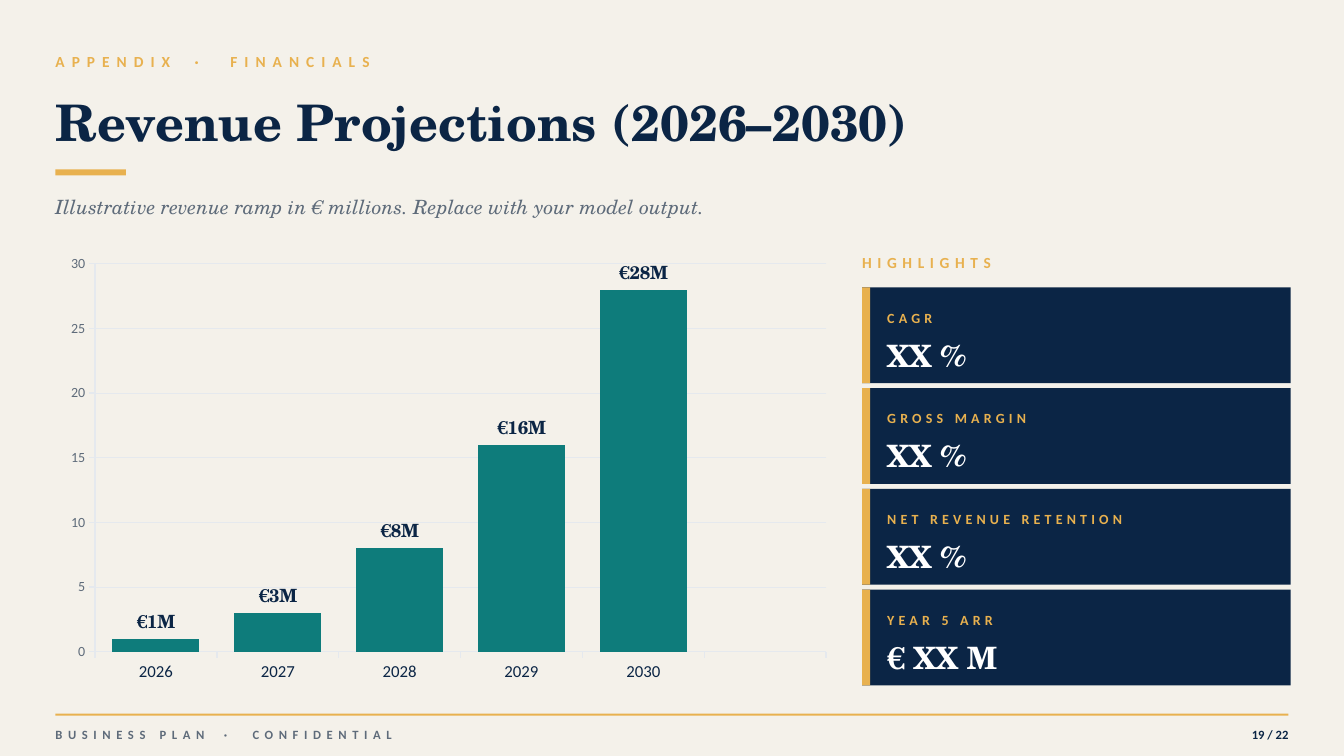
from pptx import Presentation, util as u
from pptx.chart.data import CategoryChartData
from pptx.dml.color import RGBColor
from pptx.enum import chart as ch, shapes, text

SERIF, SANS = "TeX Gyre Schola", "Calibri"
NAVY, GOLD, TEAL, SLATE = "0B2545", "E8B14F", "0E7C7B", "5E6B7A"
CREAM, PALE, WHITE = "F4F1EA", "E5E9EE", "FFFFFF"
SEPARATOR = " · "


def px(length):
    return u.Emu(length * 9144)


def color(code):
    return RGBColor.from_string(code)


def style_font(font, size, code, face, bold=False, italic=False):
    font.size, font.name = u.Pt(size), face
    font.bold, font.italic = bold, italic
    font.color.rgb = color(code)


def write(frame, content, size=11, code=GOLD, face=SANS, bold=True,
          italic=False, tracking=0, align=text.PP_ALIGN.LEFT):
    frame.margin_left = frame.margin_right = 0
    frame.margin_top = frame.margin_bottom = 0
    frame.word_wrap = True
    frame.auto_size = text.MSO_AUTO_SIZE.NONE
    frame.vertical_anchor = text.MSO_ANCHOR.MIDDLE
    line = frame.paragraphs[0]
    line.alignment = align
    for part in filter(None, content.partition(SEPARATOR)):
        run = line.add_run()
        run.text = part
        style_font(run.font, size, code, face, bold, italic)
        if tracking:
            spread = 2 if part == SEPARATOR else 1
            run.font._element.set("spc", str(tracking * spread * 100))


class Deck:
    def __init__(self):
        self.prs = Presentation()
        self.prs.slide_width, self.prs.slide_height = px(1333), px(750)
        self.slide = self.prs.slides.add_slide(self.prs.slide_layouts[5])
        fill = self.slide.background.fill
        fill.solid()
        fill.fore_color.rgb = color(CREAM)

    def title(self, content, x, y, w, h):
        heading = self.slide.shapes.title
        heading.left, heading.top = px(x), px(y)
        heading.width, heading.height = px(w), px(h)
        write(heading.text_frame, content, size=36, code=NAVY, face=SERIF)

    def label(self, content, x, y, w, h, **style):
        box = self.slide.shapes.add_textbox(px(x), px(y), px(w), px(h))
        write(box.text_frame, content, **style)

    def bar(self, x, y, w, h, code=GOLD):
        block = self.slide.shapes.add_shape(
            shapes.MSO_SHAPE.RECTANGLE, px(x), px(y), px(w), px(h))
        block.shadow.inherit = False
        block.fill.solid()
        block.fill.fore_color.rgb = color(code)
        block.line.fill.background()

    def card(self, y, metric, value):
        self.bar(855, y, 425, 95, NAVY)
        self.bar(855, y, 8, 95)
        self.label(metric, 880, y + 15, 400, 30, size=10, tracking=3)
        self.label(value, 880, y + 42, 400, 50, size=22, code=WHITE, face=SERIF)

    def columns(self, years, revenue, x, y, w, h):
        data = CategoryChartData()
        data.categories = years
        data.add_series("Series 1", revenue)
        chart = self.slide.shapes.add_chart(
            ch.XL_CHART_TYPE.COLUMN_CLUSTERED, px(x), px(y), px(w), px(h), data).chart
        chart.has_title = chart.has_legend = False
        style_font(chart.font, 10, "000000", SANS)

        for axis, size, code in ((chart.category_axis, 12, NAVY),
                                 (chart.value_axis, 10, SLATE)):
            style_font(axis.tick_labels.font, size, code, SANS)
            axis.major_tick_mark = ch.XL_TICK_MARK.OUTSIDE
            axis.format.line.color.rgb = color(PALE)
            axis.format.line.width = u.Pt(1)
        chart.category_axis.tick_label_position = ch.XL_TICK_LABEL_POSITION.LOW
        scale = chart.value_axis
        scale.minimum_scale, scale.maximum_scale, scale.major_unit = 0, 30, 5
        scale.has_major_gridlines = True
        grid = scale.major_gridlines.format.line
        grid.color.rgb, grid.width = color(PALE), u.Pt(0.5)

        plot = chart.plots[0]
        plot.gap_width, plot.vary_by_categories = 40, False
        ramp = plot.series[0]
        ramp.format.fill.solid()
        ramp.format.fill.fore_color.rgb = color(TEAL)
        amounts = ramp.data_labels
        amounts.show_value = True
        amounts.number_format, amounts.number_format_is_linked = '"€"0"M"', False
        amounts.position = ch.XL_LABEL_POSITION.OUTSIDE_END
        style_font(amounts.font, 13, NAVY, SERIF, bold=True)


def main():
    deck = Deck()
    deck.label("APPENDIX · FINANCIALS", 55, 45, 1000, 32, tracking=5)
    deck.title("Revenue Projections (2026–2030)", 55, 78, 1230, 85)
    deck.bar(55, 168, 70, 6)
    deck.label("Illustrative revenue ramp in € millions. Replace with your model output.",
               55, 185, 1230, 40, size=14, code=SLATE, face=SERIF, bold=False, italic=True)

    deck.columns(["2026", "2027", "2028", "2029", "2030", ""],
                 [1, 3, 8, 16, 28, None], 55, 245, 780, 440)

    deck.label("HIGHLIGHTS", 855, 245, 425, 30, tracking=4)
    highlights = [("CAGR", "XX %"), ("GROSS MARGIN", "XX %"),
                  ("NET REVENUE RETENTION", "XX %"), ("YEAR 5 ARR", "€ XX M")]
    for row, (metric, value) in enumerate(highlights):
        deck.card(285 + 100 * row, metric, value)

    deck.bar(55, 708, 1223, 2)
    deck.label("BUSINESS PLAN · CONFIDENTIAL", 55, 715, 600, 28,
               size=9, code=SLATE, tracking=4)
    deck.label("19 / 22", 1178, 715, 100, 28, size=9, code=NAVY,
               align=text.PP_ALIGN.RIGHT)
    deck.prs.save("out.pptx")


if __name__ == "__main__":
    main()
